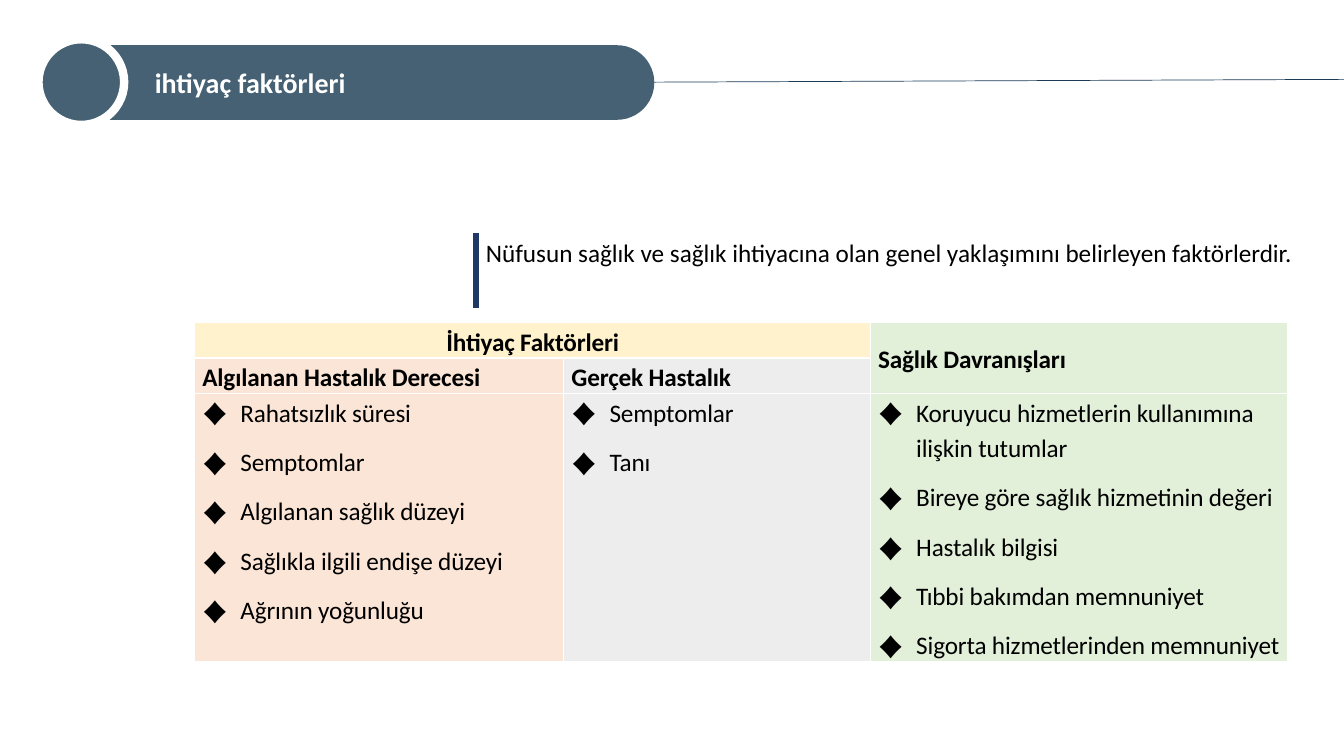
from dataclasses import dataclass

from lxml.etree import SubElement
from pptx import Presentation
from pptx.dml.color import RGBColor
from pptx.enum.shapes import MSO_CONNECTOR, MSO_SHAPE
from pptx.enum.text import MSO_ANCHOR, MSO_AUTO_SIZE, PP_ALIGN
from pptx.oxml import parse_xml
from pptx.oxml.ns import nsdecls, qn
from pptx.util import Cm, Pt


@dataclass(frozen=True)
class Theme:
    font: str = "Calibri"
    title_size: int = 20
    body_size: int = 18
    bar: str = "456173"
    rule: str = "1B3C59"
    accent: str = "203864"
    text: str = "000000"
    white: str = "FFFFFF"
    yellow: str = "FFF2CC"
    orange: str = "FBE5D6"
    grey: str = "EDEDED"
    green: str = "E2F0D9"


THEME = Theme()
SLIDE_WIDTH, SLIDE_HEIGHT = 33.87, 19.05

# Each column: heading, fill, bullet items
COLUMNS = [
    ("Algılanan Hastalık Derecesi", THEME.orange,
     ["Rahatsızlık süresi", "Semptomlar", "Algılanan sağlık düzeyi",
      "Sağlıkla ilgili endişe düzeyi", "Ağrının yoğunluğu"]),
    ("Gerçek Hastalık", THEME.grey, ["Semptomlar", "Tanı"]),
    ("Sağlık Davranışları", THEME.green,
     ["Koruyucu hizmetlerin kullanımına ilişkin tutumlar",
      "Bireye göre sağlık hizmetinin değeri", "Hastalık bilgisi",
      "Tıbbi bakımdan memnuniyet", "Sigorta hizmetlerinden memnuniyet"]),
]


def style_font(para, size=THEME.body_size, color=THEME.text, bold=False):
    para.font.name = THEME.font
    para.font.size = Pt(size)
    para.font.bold = bold
    para.font.color.rgb = RGBColor.from_string(color)


def add_bullet(para):
    properties = para._p.get_or_add_pPr()
    properties.set("marL", str(Cm(0.96)))
    properties.set("indent", str(-Cm(0.96)))
    SubElement(properties, qn("a:buFont")).set("typeface", THEME.font)
    SubElement(properties, qn("a:buChar")).set("char", "♦")


def tighten(para):
    """Draw the letters 0.1 point closer together."""
    para._p.pPr.find(qn("a:defRPr")).set("spc", "-10")


def fill_cell(cell, lines, fill, bold=False, bullets=False, align=PP_ALIGN.LEFT):
    cell.fill.solid()
    cell.fill.fore_color.rgb = RGBColor.from_string(fill)
    cell.margin_left = cell.margin_right = Cm(0.19)
    cell.margin_top = cell.margin_bottom = 0
    frame = cell.text_frame
    for index, line in enumerate(lines):
        para = frame.add_paragraph() if index else frame.paragraphs[0]
        para.text = line
        para.alignment = align
        para.line_spacing = 1.15
        para.space_after = Pt(10)
        if bullets:
            add_bullet(para)
        style_font(para, bold=bold)
        tighten(para)


def set_borders(cell, borders):
    """Borders map a side (L, R, T, B) to a colour and a width in points."""
    properties = cell._tc.get_or_add_tcPr()
    sides = [side for side in "LRTB" if side in borders]
    for index, side in enumerate(sides):
        color, width = borders[side]
        properties.insert(index, parse_xml(
            f'<a:ln{side} {nsdecls("a")} w="{Pt(width)}"><a:solidFill>'
            f'<a:srgbClr val="{color}"/></a:solidFill></a:ln{side}>'))


def add_plain_table(slide, left, top, widths, heights):
    frame = slide.shapes.add_table(len(heights), len(widths), Cm(left), Cm(top),
                                   Cm(sum(widths)), Cm(sum(heights)))
    table = frame.table
    table.first_row = table.horz_banding = False
    for column, width in zip(table.columns, widths):
        column.width = Cm(width)
    for row, height in zip(table.rows, heights):
        row.height = Cm(height)
    return table


def add_filled_shape(slide, kind, left, top, width, height):
    shape = slide.shapes.add_shape(kind, Cm(left), Cm(top), Cm(width), Cm(height))
    shape.shadow.inherit = False
    shape.fill.solid()
    shape.fill.fore_color.rgb = RGBColor.from_string(THEME.bar)
    shape.line.fill.background()
    return shape


def add_header(slide, left, top, width, height):
    # Rounded bar and the disc at its left end
    bar_top, bar_height = top + 0.15, height - 0.28
    bar = add_filled_shape(slide, MSO_SHAPE.ROUNDED_RECTANGLE,
                           left, bar_top, width, bar_height)
    bar.adjustments[0] = 0.5
    disc = add_filled_shape(slide, MSO_SHAPE.OVAL, left, top, height, height)
    disc.line.color.rgb = RGBColor.from_string(THEME.white)
    disc.line.width = Pt(6)

    # Rule running to the slide edge
    rule = slide.shapes.add_connector(
        MSO_CONNECTOR.STRAIGHT, Cm(left + width), Cm(top + height / 2),
        Cm(SLIDE_WIDTH), Cm(top + height / 2 - 0.07))
    rule.line.color.rgb = RGBColor.from_string(THEME.rule)
    rule.line.width = Pt(0.5)
    SubElement(rule._element.spPr, qn("a:effectLst"))

    # Title, brought in front of the bar
    title = slide.shapes.title
    disc._element.addnext(title._element)
    title.left, title.top = Cm(left), Cm(bar_top)
    title.width, title.height = Cm(width), Cm(bar_height)
    frame = title.text_frame
    frame.text = "ihtiyaç faktörleri"
    frame.auto_size = MSO_AUTO_SIZE.NONE
    frame.vertical_anchor = MSO_ANCHOR.MIDDLE
    frame.margin_left = Cm(2.93)
    para = frame.paragraphs[0]
    para.alignment = PP_ALIGN.LEFT
    style_font(para, THEME.title_size, THEME.white, bold=True)


def add_definition(slide, left, top, width, height):
    cell = add_plain_table(slide, left, top, [width], [height]).cell(0, 0)
    cell.fill.solid()
    cell.fill.fore_color.rgb = RGBColor.from_string(THEME.white)
    cell.text = ("Nüfusun sağlık ve sağlık ihtiyacına olan genel yaklaşımını "
                 "belirleyen faktörlerdir.")
    style_font(cell.text_frame.paragraphs[0])
    set_borders(cell, {"L": (THEME.accent, 4.5), "R": (THEME.white, 1),
                       "B": (THEME.white, 3)})


def add_factor_table(slide, left, top, widths, heights):
    table = add_plain_table(slide, left, top, widths, heights)
    for cell in table.iter_cells():
        set_borders(cell, {side: (THEME.white, 1) for side in "LRTB"})

    # Merged headings
    table.cell(0, 0).merge(table.cell(0, 1))
    table.cell(0, 2).merge(table.cell(1, 2))
    fill_cell(table.cell(0, 0), ["İhtiyaç Faktörleri"], THEME.yellow,
              bold=True, align=PP_ALIGN.CENTER)
    table.cell(0, 2).vertical_anchor = MSO_ANCHOR.MIDDLE

    # Column headings and lists
    for index, (heading, fill, items) in enumerate(COLUMNS):
        heading_row = 0 if index == 2 else 1
        fill_cell(table.cell(heading_row, index), [heading], fill, bold=True)
        fill_cell(table.cell(2, index), items, fill, bullets=True)


def main():
    deck = Presentation()
    deck.slide_width, deck.slide_height = Cm(SLIDE_WIDTH), Cm(SLIDE_HEIGHT)
    slide = deck.slides.add_slide(deck.slide_layouts[5])
    add_header(slide, 0.97, 0.99, 15.52, 2.16)
    add_definition(slide, 11.99, 5.88, 20.88, 1.84)
    add_factor_table(slide, 4.91, 8.13, [9.3, 7.73, 10.5], [0.89, 0.89, 6.76])
    deck.save("out.pptx")


if __name__ == "__main__":
    main()
